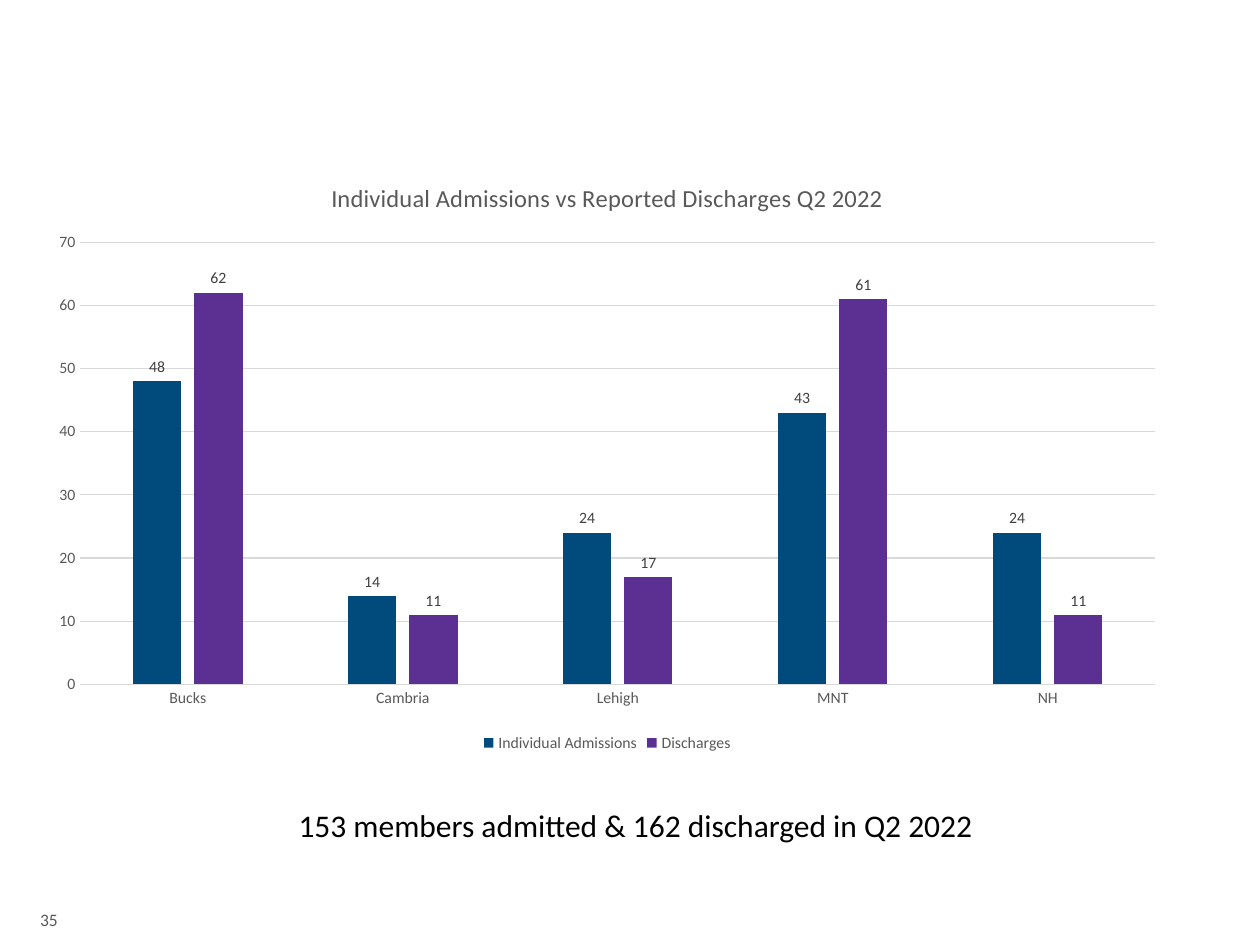
from pptx import Presentation
from pptx.chart.data import CategoryChartData
from pptx.dml.color import RGBColor
from pptx.enum.chart import XL_CHART_TYPE, XL_LABEL_POSITION, XL_LEGEND_POSITION, XL_TICK_MARK
from pptx.enum.text import MSO_ANCHOR, PP_ALIGN
from pptx.util import Inches, Pt

COLUMN = XL_CHART_TYPE.COLUMN_CLUSTERED
OUTSIDE = XL_LABEL_POSITION.OUTSIDE_END
BELOW = XL_LEGEND_POSITION.BOTTOM
NO_TICK = XL_TICK_MARK.NONE
TOP, BOTTOM = MSO_ANCHOR.TOP, MSO_ANCHOR.BOTTOM
LEFT, CENTER = PP_ALIGN.LEFT, PP_ALIGN.CENTER

TITLE = "Individual Admissions vs Reported Discharges Q2 2022"
SITES = ["Bucks", "Cambria", "Lehigh", "MNT", "NH"]
SERIES = [
    ("Individual Admissions", [48, 14, 24, 43, 24], "004A7C"),
    ("Discharges", [62, 11, 17, 61, 11], "5C2F92"),
]
TOTAL = "153 members admitted & 162 discharged in Q2 2022"
PAGE = "35"

THEME = {
    "font": "Calibri",
    "black": "000000", "gray": "595959", "label": "404040", "grid": "D9D9D9",
    "title": 14, "total": 18, "page": 10, "small": 9, "rule": 0.75,
}


def color(name):
    return RGBColor.from_string(THEME[name])


def style(font, size, tint):
    font.name = THEME["font"]
    font.size = Pt(THEME[size])
    font.bold = False
    font.color.rgb = color(tint)


def rule(line):
    line.color.rgb = color("grid")
    line.width = Pt(THEME["rule"])


def add_text(slide, text, box, size, tint, align=LEFT, anchor=TOP, after=0):
    frame = slide.shapes.add_textbox(*map(Inches, box)).text_frame
    frame.word_wrap = True
    frame.vertical_anchor = anchor
    para = frame.paragraphs[0]
    para.alignment = align
    para.space_after = Pt(after)
    run = para.add_run()
    run.text = text
    style(run.font, size, tint)


def add_bars(slide, box):
    data = CategoryChartData()
    data.categories = SITES
    for name, vals, _ in SERIES:
        data.add_series(name, vals)
    chart = slide.shapes.add_chart(COLUMN, *map(Inches, box), data).chart
    style(chart.font, "page", "black")

    chart.has_title = True
    frame = chart.chart_title.text_frame
    frame.text = TITLE
    style(frame.paragraphs[0].runs[0].font, "title", "gray")
    chart.chart_title.include_in_layout = False

    chart.has_legend = True
    chart.legend.position = BELOW
    chart.legend.include_in_layout = False
    style(chart.legend.font, "small", "gray")

    for axis in (chart.category_axis, chart.value_axis):
        axis.major_tick_mark = axis.minor_tick_mark = NO_TICK
        style(axis.tick_labels.font, "small", "gray")
    rule(chart.category_axis.format.line)
    chart.value_axis.format.line.fill.background()
    rule(chart.value_axis.major_gridlines.format.line)

    plot = chart.plots[0]
    plot.gap_width = 219
    plot.overlap = -27
    plot.vary_by_categories = False
    for bars, (_, _, tint) in zip(plot.series, SERIES):
        bars.format.fill.solid()
        bars.format.fill.fore_color.rgb = RGBColor.from_string(tint)
        labels = bars.data_labels
        labels.show_value = True
        labels.position = OUTSIDE
        style(labels.font, "small", "label")


def main():
    deck = Presentation()
    deck.slide_width, deck.slide_height = Inches(10), Inches(7.5)
    slide = deck.slides.add_slide(deck.slide_layouts[6])
    add_text(slide, PAGE, (0.22, 7.03, 0.44, 0.4), "page", "gray", anchor=BOTTOM, after=6)
    add_bars(slide, (0.29, 1.25, 9.06, 4.76))
    add_text(slide, TOTAL, (1.62, 6.35, 6.85, 0.4), "total", "black", align=CENTER)
    deck.save("out.pptx")


if __name__ == "__main__":
    main()
